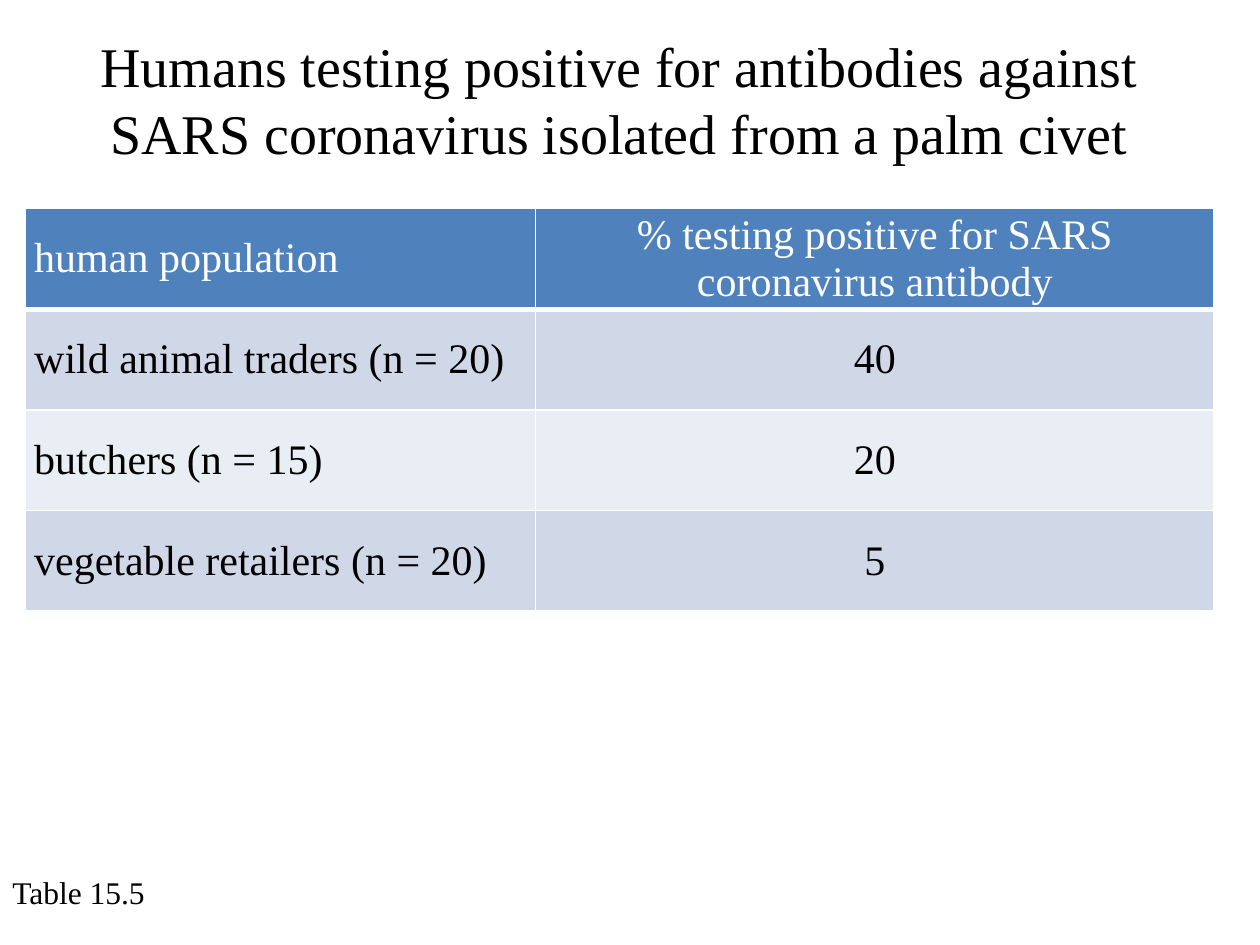
from lxml.etree import SubElement
from pptx import Presentation
from pptx.dml.color import RGBColor
from pptx.enum.text import MSO_ANCHOR, MSO_AUTO_SIZE, PP_ALIGN
from pptx.oxml.ns import qn
from pptx.util import Cm, Pt

BLACK = RGBColor(0x00, 0x00, 0x00)
WHITE = RGBColor(0xFF, 0xFF, 0xFF)
HEADER_BLUE = RGBColor(0x4F, 0x81, 0xBD)
BAND_DARK = RGBColor(0xD0, 0xD8, 0xE8)
BAND_LIGHT = RGBColor(0xE9, 0xED, 0xF4)
FONT = "Times New Roman"

LEFT = Cm(0.51)
COLUMN_WIDTHS = [Cm(10.29), Cm(13.67)]
CONTENT_WIDTH = sum(COLUMN_WIDTHS)
ROW_HEIGHT = Cm(2.03)

ROWS = [
    ("human population", "% testing positive for SARS coronavirus antibody"),
    ("wild animal traders (n = 20)", "40"),
    ("butchers (n = 15)", "20"),
    ("vegetable retailers (n = 20)", "5"),
]


def write_text(text_frame, text, size, color=BLACK, alignment=PP_ALIGN.LEFT):
    paragraph = text_frame.paragraphs[0]
    paragraph.alignment = alignment
    run = paragraph.add_run()
    run.text = text
    run.font.name = FONT
    run.font.size = Pt(size)
    run.font.bold = False
    run.font.color.rgb = color


def add_title(slide, text):
    title = slide.shapes.title
    title.left, title.top = LEFT, Cm(0.48)
    title.width, title.height = CONTENT_WIDTH, Cm(3)
    title.text_frame.auto_size = MSO_AUTO_SIZE.SHAPE_TO_FIT_TEXT
    write_text(title.text_frame, text, 32, alignment=PP_ALIGN.CENTER)


def add_caption(slide, text):
    caption = slide.shapes.add_textbox(Cm(0), Cm(17.48), Cm(3.38), Cm(1.02))
    caption.text_frame.word_wrap = False
    caption.text_frame.auto_size = MSO_AUTO_SIZE.SHAPE_TO_FIT_TEXT
    write_text(caption.text_frame, text, 18)


def set_borders(cell, widths):
    properties = cell._tc.get_or_add_tcPr()
    for side, width in widths.items():
        line = SubElement(properties, qn(f"a:ln{side}"), w=str(Pt(width)))
        fill = SubElement(line, qn("a:solidFill"))
        SubElement(fill, qn("a:srgbClr"), val=str(WHITE))


def format_cell(cell, text, row, column):
    is_header = row == 0
    set_borders(cell, {
        "L": 1,
        "R": 1,
        "T": 3 if row == 1 else 1,
        "B": 3 if is_header else 1,
    })
    cell.fill.solid()
    band = BAND_DARK if row % 2 else BAND_LIGHT
    cell.fill.fore_color.rgb = HEADER_BLUE if is_header else band
    cell.vertical_anchor = MSO_ANCHOR.MIDDLE
    cell.margin_left = cell.margin_right = Cm(0.18)
    cell.margin_top = cell.margin_bottom = Cm(0)
    write_text(
        cell.text_frame,
        text,
        24,
        WHITE if is_header else BLACK,
        PP_ALIGN.CENTER if column else PP_ALIGN.LEFT,
    )


def add_antibody_table(slide):
    table = slide.shapes.add_table(
        len(ROWS), len(COLUMN_WIDTHS), LEFT, Cm(4.2),
        CONTENT_WIDTH, ROW_HEIGHT * len(ROWS),
    ).table
    for column, width in zip(table.columns, COLUMN_WIDTHS):
        column.width = width
    for row, texts in enumerate(ROWS):
        table.rows[row].height = ROW_HEIGHT
        for column, text in enumerate(texts):
            format_cell(table.cell(row, column), text, row, column)


def main():
    presentation = Presentation()
    presentation.slide_width = Cm(25.4)
    presentation.slide_height = Cm(19.05)
    slide = presentation.slides.add_slide(presentation.slide_layouts[5])
    add_title(
        slide,
        "Humans testing positive for antibodies against "
        "SARS coronavirus isolated from a palm civet",
    )
    add_caption(slide, "Table 15.5")
    add_antibody_table(slide)
    presentation.save("out.pptx")


if __name__ == "__main__":
    main()
